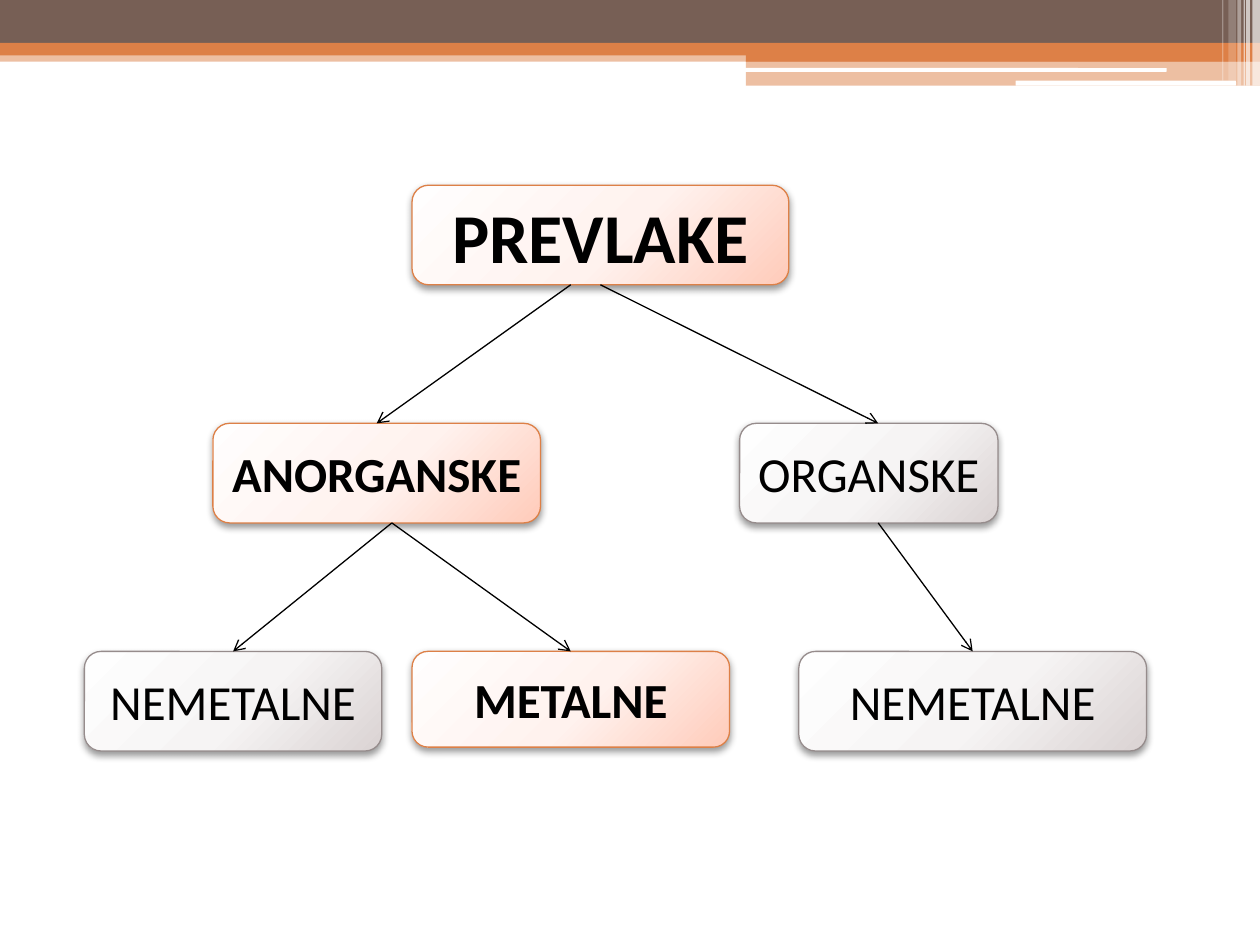
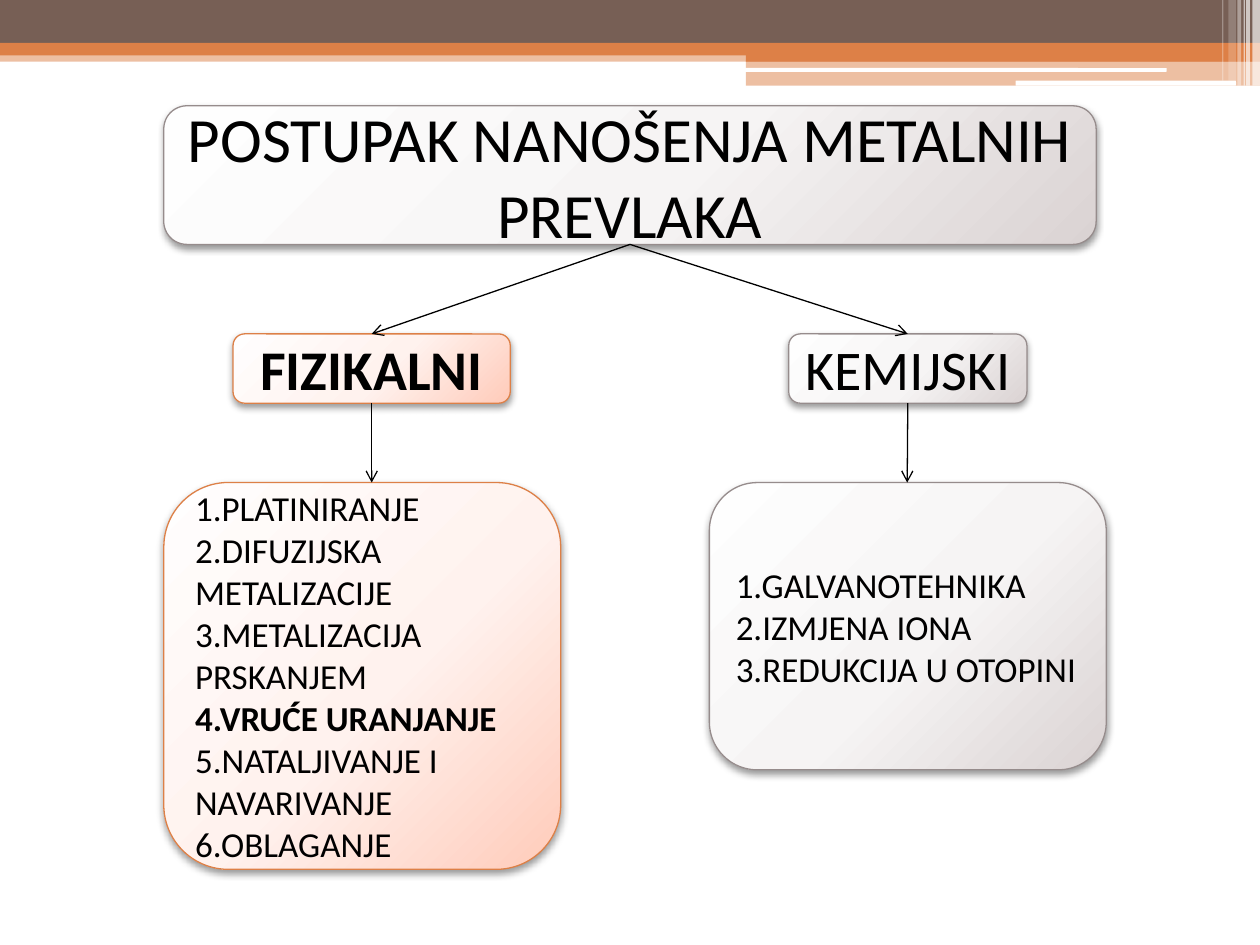
from lxml import etree
from pptx import Presentation
from pptx import util as u
from pptx.dml.color import RGBColor
from pptx.enum import shapes, text
from pptx.oxml import parse_xml
from pptx.oxml.ns import nsdecls, qn

COLUMNS, ROWS = 100, 75
BROWN, ORANGE, WHITE, BLACK = "775F55", "DD8047", "FFFFFF", "000000"
RECTANGLE = shapes.MSO_SHAPE.RECTANGLE
ROUNDED = shapes.MSO_SHAPE.ROUNDED_RECTANGLE

# Box styles: outline, then gradient colours at 0, 55 and 100 %
GREY_BOX = ("968C8C", ("FEFEFE", "F6F4F4", "DAD3D3"))
ORANGE_BOX = (ORANGE, ("FFFEFE", "FFF2EE", "FFCBBA"))

# Header bands: left, top, width, height, colour, opacity in %
BANDS = [
    (0, 4, 100, 0.9, ORANGE, 50),
    (0, 0, 100, 3.4, BROWN, 100),
    (0, 3.4, 100, 1, ORANGE, 100),
    (59.2, 3.9, 40.8, 1, ORANGE, 100),
    (59.2, 4.8, 40.8, 2, ORANGE, 50),
]
HEADER_LINES = [(59.1, 5.4, 33.5, 0.3), (80.6, 6.4, 17.5, 0.4)]
# Stripes at the right end of the header: left, width, height, opacity in %
STRIPES = [
    (99.4, 0.6, 6.8, 65), (98.9, 0.3, 6.8, 65), (98.7, 0.1, 6.8, 60),
    (98.2, 0.3, 6.8, 40), (97.5, 0.6, 6.4, 20), (97, 0.1, 6.4, 30),
]


def rgb(value):
    return RGBColor.from_string(value)


class Deck:
    """Draws on the current slide; lengths are grid columns and rows."""

    font_name = "Calibri"
    line_width = u.Pt(0.75)

    def __init__(self):
        self.presentation = Presentation()
        self.presentation.slide_width = u.Inches(10)
        self.presentation.slide_height = u.Inches(7.5)
        self.column = self.presentation.slide_width / COLUMNS
        self.row = self.presentation.slide_height / ROWS
        self.slide = None

    def new_slide(self):
        self.slide = self.presentation.slides.add_slide(self.presentation.slide_layouts[6])
        for left, top, width, height, color, opacity in BANDS:
            self.band(RECTANGLE, left, top, width, height, color, opacity)
        for line in HEADER_LINES:
            self.band(ROUNDED, *line, WHITE)
        for left, width, height, opacity in STRIPES:
            self.band(RECTANGLE, left, 0, width, height, WHITE, opacity)

    def shape(self, kind, left, top, width, height):
        shape = self.slide.shapes.add_shape(
            kind, round(left * self.column), round(top * self.row),
            round(width * self.column), round(height * self.row))
        shape.shadow.inherit = False
        return shape

    def band(self, kind, left, top, width, height, color, opacity=100):
        shape = self.shape(kind, left, top, width, height)
        shape.fill.solid()
        shape.fill.fore_color.rgb = rgb(color)
        shape.line.fill.background()
        if opacity < 100:
            fill_color = next(shape.element.spPr.iter(qn("a:srgbClr")))
            etree.SubElement(fill_color, qn("a:alpha"), val=str(opacity * 1000))

    def box(self, left, top, width, height, lines, size, style, bold=(), align="CENTER"):
        """Add a shaded rounded box; bold holds the lines to set in bold."""
        shape = self.shape(ROUNDED, left, top, width, height)
        outline, gradient = style
        shape.line.color.rgb = rgb(outline)
        shape.line.width = self.line_width
        self.shade(shape, gradient)
        frame = shape.text_frame
        frame.word_wrap = True
        frame.vertical_anchor = text.MSO_ANCHOR.MIDDLE
        for index, line in enumerate(lines):
            paragraph = frame.add_paragraph() if index else frame.paragraphs[0]
            paragraph.text = line
            paragraph.alignment = text.PP_ALIGN[align]
            font = paragraph.font
            font.name, font.size, font.bold = self.font_name, u.Pt(size), line in bold
            font.color.rgb = rgb(BLACK)
        return shape

    def label(self, left, top, width, height, words, size, strong=False):
        """Add a one-paragraph box, orange and bold when strong."""
        style = ORANGE_BOX if strong else GREY_BOX
        return self.box(left, top, width, height, [words], size, style,
                        bold=[words] if strong else ())

    def shade(self, shape, gradient):
        """Give a shape a circular gradient and a soft shadow below."""
        stops = "".join(
            f'<a:gs pos="{position * 1000}"><a:srgbClr val="{color}"/></a:gs>'
            for position, color in zip((0, 55, 100), gradient))
        properties = shape.element.spPr
        properties.find(qn("a:prstGeom")).addnext(parse_xml(
            f'<a:gradFill {nsdecls("a")} rotWithShape="1"><a:gsLst>{stops}</a:gsLst>'
            '<a:path path="circle"><a:fillToRect l="-40000" t="-90000" r="140000" b="190000"/>'
            '</a:path></a:gradFill>'))
        properties.find(qn("a:effectLst")).append(parse_xml(
            f'<a:outerShdw {nsdecls("a")} blurRad="{u.Pt(4.1)}" dist="{u.Pt(2)}" '
            f'dir="5400000" rotWithShape="0"><a:srgbClr val="{BLACK}">'
            '<a:alpha val="40000"/></a:srgbClr></a:outerShdw>'))

    def arrow(self, parent, child, start=None, end=None):
        """Join two boxes, centre to centre unless a start or end column is given."""
        def across(shape, column):
            return shape.left + shape.width // 2 if column is None else round(column * self.column)

        connector = self.slide.shapes.add_connector(
            shapes.MSO_CONNECTOR.STRAIGHT,
            across(parent, start), parent.top + parent.height, across(child, end), child.top)
        connector.line.color.rgb = rgb(BLACK)
        connector.line.width = self.line_width
        properties = connector.element.spPr
        etree.SubElement(properties.find(qn("a:ln")), qn("a:tailEnd"), type="arrow")
        etree.SubElement(properties, qn("a:effectLst"))


def coating_types(deck):
    deck.new_slide()
    coatings = deck.label(32.7, 14.7, 29.9, 7.9, "PREVLAKE", 40, strong=True)
    inorganic = deck.label(16.9, 33.6, 26, 7.9, "ANORGANSKE", 28, strong=True)
    organic = deck.label(58.7, 33.6, 20.5, 7.9, "ORGANSKE", 28)
    nonmetal = deck.label(6.7, 51.7, 23.6, 7.9, "NEMETALNE", 28)
    organic_nonmetal = deck.label(63.4, 51.7, 27.6, 7.9, "NEMETALNE", 28)
    metal = deck.label(32.7, 51.7, 25.2, 7.6, "METALNE", 28, strong=True)
    deck.arrow(coatings, inorganic, start=45.3)
    deck.arrow(coatings, organic, end=69.7)
    deck.arrow(organic, organic_nonmetal, start=69.7)
    for child in (nonmetal, metal):
        deck.arrow(inorganic, child, start=31.1)


def coating_processes(deck):
    deck.new_slide()
    process = deck.label(13, 8.4, 74, 11, "POSTUPAK NANOŠENJA METALNIH PREVLAKA", 36)
    physical = deck.label(18.5, 26.5, 22, 5.5, "FIZIKALNI", 32, strong=True)
    chemical = deck.label(62.6, 26.5, 18.9, 5.5, "KEMIJSKI", 32)
    physical_list = deck.box(
        13, 38.3, 31.5, 30.7,
        ["1.PLATINIRANJE", "2.DIFUZIJSKA METALIZACIJE", "3.METALIZACIJA PRSKANJEM",
         "4.VRUĆE URANJANJE", "5.NATALJIVANJE I NAVARIVANJE", "6.OBLAGANJE"],
        20, ORANGE_BOX, bold=["4.VRUĆE URANJANJE"], align="LEFT")
    chemical_list = deck.box(
        56.3, 38.3, 31.5, 22.8,
        ["1.GALVANOTEHNIKA", "2.IZMJENA IONA", "3.REDUKCIJA U OTOPINI"],
        20, GREY_BOX, align="LEFT")
    for method, steps, column in ((physical, physical_list, 29.5), (chemical, chemical_list, 72)):
        deck.arrow(process, method)
        deck.arrow(method, steps, end=column)


def main():
    deck = Deck()
    coating_types(deck)
    coating_processes(deck)
    deck.presentation.save("out.pptx")


if __name__ == "__main__":
    main()
